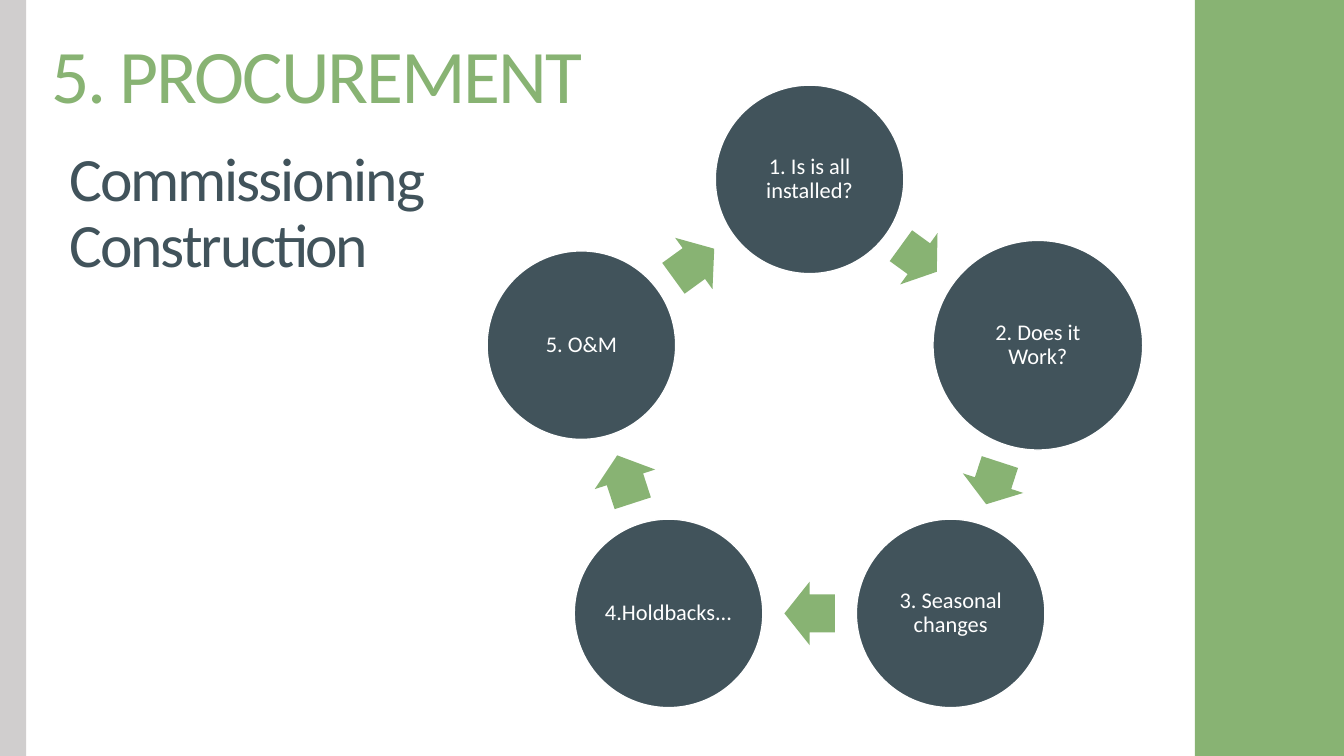
from math import cos, radians, sin

from pptx import Presentation
from pptx.dml.color import RGBColor
from pptx.enum.shapes import MSO_SHAPE as Shape
from pptx.enum.text import MSO_ANCHOR as Anchor, MSO_AUTO_SIZE as AutoSize, PP_ALIGN as Align
from pptx.util import Inches, Pt

GREEN, SLATE, GREY, WHITE = "88B373", "41535B", "D0CECE", "FFFFFF"


def color(hex_code):
    return RGBColor.from_string(hex_code)


def write(frame, text, size, ink, align=Align.LEFT, anchor=Anchor.TOP, inset=None, tracking=0):
    frame.word_wrap = True
    frame.auto_size = AutoSize.NONE
    frame.vertical_anchor = anchor
    if inset is not None:
        frame.margin_left = frame.margin_right = Inches(inset)
        frame.margin_top = frame.margin_bottom = Inches(inset)
    paragraph = frame.paragraphs[0]
    paragraph.text = text
    paragraph.alignment = align
    paragraph.line_spacing = 0.9
    paragraph.space_before = Pt(0)
    for run in paragraph.runs:
        run.font.name = "Calibri"
        run.font.size = Pt(size)
        run.font.color.rgb = color(ink)
        if tracking:
            run.font._element.set("spc", str(round(tracking * 100)))


class SlideBuilder:
    def __init__(self, slide):
        self.slide = slide

    def title(self, text, left, top, width, height):
        heading = self.slide.shapes.title
        heading.left, heading.top = Inches(left), Inches(top)
        heading.width, heading.height = Inches(width), Inches(height)
        write(heading.text_frame, text, 54, GREEN, tracking=-1.5)

    def subtitle(self, text, left, top, width, height):
        box = self.slide.shapes.add_textbox(
            Inches(left), Inches(top), Inches(width), Inches(height))
        write(box.text_frame, text, 44, SLATE, tracking=-1.5)

    def shape(self, kind, left, top, width, height, fill, parent=None):
        shapes = (parent or self.slide).shapes
        item = shapes.add_shape(kind, Inches(left), Inches(top), Inches(width), Inches(height))
        item.shadow.inherit = False
        item.fill.solid()
        item.fill.fore_color.rgb = color(fill)
        item.line.fill.background()
        return item

    def step(self, ring, text, x, y, diameter):
        circle = self.shape(Shape.OVAL, x - diameter / 2, y - diameter / 2,
                            diameter, diameter, SLATE, ring)
        circle.line.color.rgb = color(WHITE)
        circle.line.width = Pt(1)
        write(circle.text_frame, text, 16, WHITE, Align.CENTER, Anchor.MIDDLE, inset=0.02)

    def arrow(self, ring, x, y, length, angle):
        width = 0.63
        arrow = self.shape(Shape.RIGHT_ARROW, x - length / 2, y - width / 2,
                           length, width, GREEN, ring)
        arrow.adjustments[0], arrow.adjustments[1] = 0.6, 0.5
        arrow.rotation = angle

    def cycle(self, steps, center_x, center_y, radius):
        ring = self.slide.shapes.add_group_shape()
        turn = 360 / len(steps)
        arrow_radius = radius * cos(radians(turn / 2))
        for i, (text, diameter, length, nudge) in enumerate(steps):
            # Circle, clockwise from the top
            place = radians(i * turn)
            self.step(ring, text, center_x + radius * sin(place),
                      center_y - radius * cos(place), diameter)
            # Arrow to the next circle, nudged along its own direction
            angle = (i + 0.5) * turn
            across, along = sin(radians(angle)), cos(radians(angle))
            self.arrow(ring, center_x + arrow_radius * across + nudge * along,
                       center_y - arrow_radius * along + nudge * across, length, angle)


def main():
    deck = Presentation()
    deck.slide_width, deck.slide_height = Inches(13.33), Inches(7.5)
    builder = SlideBuilder(deck.slides.add_slide(deck.slide_layouts[5]))

    # Side bands
    builder.shape(Shape.RECTANGLE, 11.85, 0, 1.48, 7.5, GREEN)
    builder.shape(Shape.RECTANGLE, 0, 0, 0.26, 7.5, GREY)

    # Headings
    builder.subtitle("Commissioning\nConstruction", 0.59, 1.42, 9.33, 1.43)
    builder.title("5. PROCUREMENT", 0.41, 0.33, 9.48, 0.92)

    # Commissioning cycle: text, circle diameter, arrow length, arrow nudge
    steps = [
        ("1. Is is all installed?", 1.87, 0.44, -0.06),
        ("2. Does it Work?", 2.08, 0.44, 0.04),
        ("3. Seasonal changes", 1.87, 0.5, 0),
        ("4.Holdbacks...", 1.87, 0.5, 0),
        ("5. O&M", 1.87, 0.5, -0.02),
    ]
    builder.cycle(steps, center_x=8.03, center_y=4.16, radius=2.38)

    deck.save("out.pptx")


if __name__ == "__main__":
    main()
